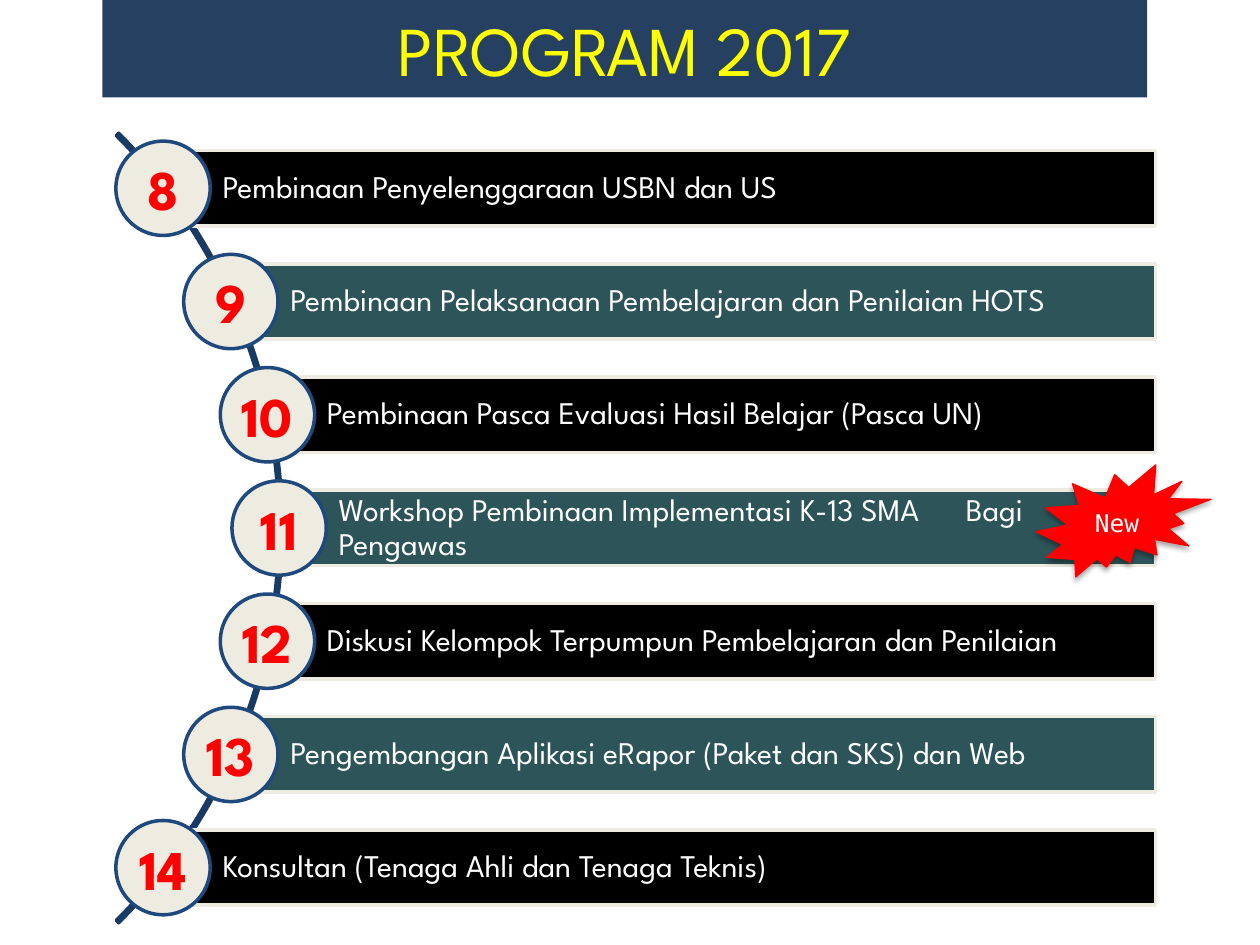
from math import sqrt

from lxml.etree import SubElement
from pptx import Presentation
from pptx.dml.color import RGBColor
from pptx.enum.shapes import MSO_SHAPE as Preset
from pptx.enum.text import MSO_ANCHOR as Anchor, MSO_AUTO_SIZE as AutoSize, PP_ALIGN as Align
from pptx.oxml.ns import qn
from pptx.util import Pt

WHITE = RGBColor(0xFF, 0xFF, 0xFF)
BLACK = RGBColor(0x00, 0x00, 0x00)
TEAL = RGBColor(0x2D, 0x55, 0x59)
CREAM = RGBColor(0xEE, 0xEC, 0xE1)
BLUE = RGBColor(0x1F, 0x49, 0x7D)
ARC_BLUE = RGBColor(0x19, 0x3A, 0x64)
TITLE_BLUE = RGBColor(0x25, 0x40, 0x61)
RED = RGBColor(0xFF, 0x00, 0x00)
YELLOW = RGBColor(0xFF, 0xFF, 0x00)

FIRST_NUMBER = 8
PROGRAMS = [
    "Pembinaan Penyelenggaraan USBN dan US",
    "Pembinaan Pelaksanaan Pembelajaran dan Penilaian HOTS",
    "Pembinaan Pasca Evaluasi Hasil Belajar (Pasca UN)",
    "Workshop Pembinaan Implementasi K-13 SMA\tBagi Pengawas",
    "Diskusi Kelompok Terpumpun Pembelajaran dan Penilaian",
    "Pengembangan Aplikasi eRapor (Paket dan SKS) dan Web",
    "Konsultan (Tenaga Ahli dan Tenaga Teknis)",
]

ARC_X, ARC_Y, ARC_RADIUS = -157.7, 301.7, 319
BADGE_ORBIT = 317.2
ROW_STEP = 64.7
BAR_RIGHT, BAR_HEIGHT = 660.2, 43.1
BADGE_SIZE = 53.9
NUMBER_WIDTH, NUMBER_HEIGHT = 50.4, 46.1
TAB_POSITION = 358.5


class SlideBuilder:
    font = "League Spartan"

    def __init__(self, slide):
        self.slide = slide

    def add_text(self, shape, text, size, color, align=Align.CENTER, bold=False, font=None):
        frame = shape.text_frame
        frame.vertical_anchor = Anchor.MIDDLE
        paragraph = frame.paragraphs[0]
        paragraph.alignment = align
        run = paragraph.add_run()
        run.text = text
        run.font.name = font or self.font
        run.font.size = Pt(size)
        run.font.bold = bold
        run.font.color.rgb = color
        return paragraph

    def shape(self, preset, left, top, width, height, fill, line, line_width=2):
        shape = self.slide.shapes.add_shape(preset, Pt(left), Pt(top), Pt(width), Pt(height))
        shape.shadow.inherit = False
        if fill is None:
            shape.fill.background()
        else:
            shape.fill.solid()
            shape.fill.fore_color.rgb = fill
        shape.line.color.rgb = line
        shape.line.width = Pt(line_width)
        return shape

    def title(self, text):
        title = self.slide.shapes.title
        title.left, title.top, title.width, title.height = Pt(58.5), Pt(0), Pt(597), Pt(55.7)
        title.fill.solid()
        title.fill.fore_color.rgb = TITLE_BLUE
        title.text_frame.auto_size = AutoSize.NONE
        self.add_text(title, text, 40, YELLOW)

    def arc(self):
        size = 2 * ARC_RADIUS
        arc = self.shape(Preset.BLOCK_ARC, ARC_X - ARC_RADIUS, ARC_Y - ARC_RADIUS,
                         size, size, None, ARC_BLUE)
        for index, value in enumerate((189, 27, 0.003)):
            arc.adjustments[index] = value

    def bar(self, left, center_y, text, fill):
        bar = self.shape(Preset.RECTANGLE, left, center_y - BAR_HEIGHT / 2,
                         BAR_RIGHT - left, BAR_HEIGHT, fill, CREAM)
        frame = bar.text_frame
        frame.word_wrap = True
        frame.margin_left = Pt(34)
        frame.margin_right = frame.margin_top = frame.margin_bottom = Pt(3.6)
        paragraph = self.add_text(bar, text, 18, WHITE, Align.LEFT)
        paragraph.line_spacing = 0.9
        if "\t" in text:
            tabs = SubElement(paragraph._p.get_or_add_pPr(), qn("a:tabLst"))
            SubElement(tabs, qn("a:tab"), pos=str(Pt(TAB_POSITION)), algn="l")

    def badge(self, center_x, center_y, number):
        self.shape(Preset.OVAL, center_x - BADGE_SIZE / 2, center_y - BADGE_SIZE / 2,
                   BADGE_SIZE, BADGE_SIZE, CREAM, BLUE)
        label = self.slide.shapes.add_textbox(
            Pt(center_x - NUMBER_WIDTH / 2), Pt(center_y - NUMBER_HEIGHT / 2),
            Pt(NUMBER_WIDTH), Pt(NUMBER_HEIGHT))
        label.text_frame.word_wrap = False
        self.add_text(label, str(number), 32, RED, bold=True)

    def starburst(self, text):
        burst = self.shape(Preset.EXPLOSION2, 592, 265.7, 100, 64, RED, RED, 0.75)
        effects = burst._element.spPr.find(qn("a:effectLst"))
        shadow = SubElement(effects, qn("a:outerShdw"), blurRad=str(Pt(3.1)),
                            dist=str(Pt(1.8)), dir="5400000", rotWithShape="0")
        color = SubElement(shadow, qn("a:srgbClr"), val=str(BLACK))
        SubElement(color, qn("a:alpha"), val="35000")
        self.add_text(burst, text, 14, WHITE, font="DejaVu Sans Mono")


def main():
    presentation = Presentation()
    presentation.slide_width, presentation.slide_height = Pt(720), Pt(540)
    title_only = presentation.slide_layouts[5]
    builder = SlideBuilder(presentation.slides.add_slide(title_only))

    builder.title("PROGRAM 2017")
    builder.arc()
    for index, program in enumerate(PROGRAMS):
        offset = (index - len(PROGRAMS) // 2) * ROW_STEP
        center_x = ARC_X + sqrt(BADGE_ORBIT ** 2 - offset ** 2)
        center_y = ARC_Y + offset
        builder.bar(center_x, center_y, program, TEAL if index % 2 else BLACK)
        builder.badge(center_x, center_y, FIRST_NUMBER + index)
    builder.starburst("New")
    presentation.save("out.pptx")


if __name__ == "__main__":
    main()
